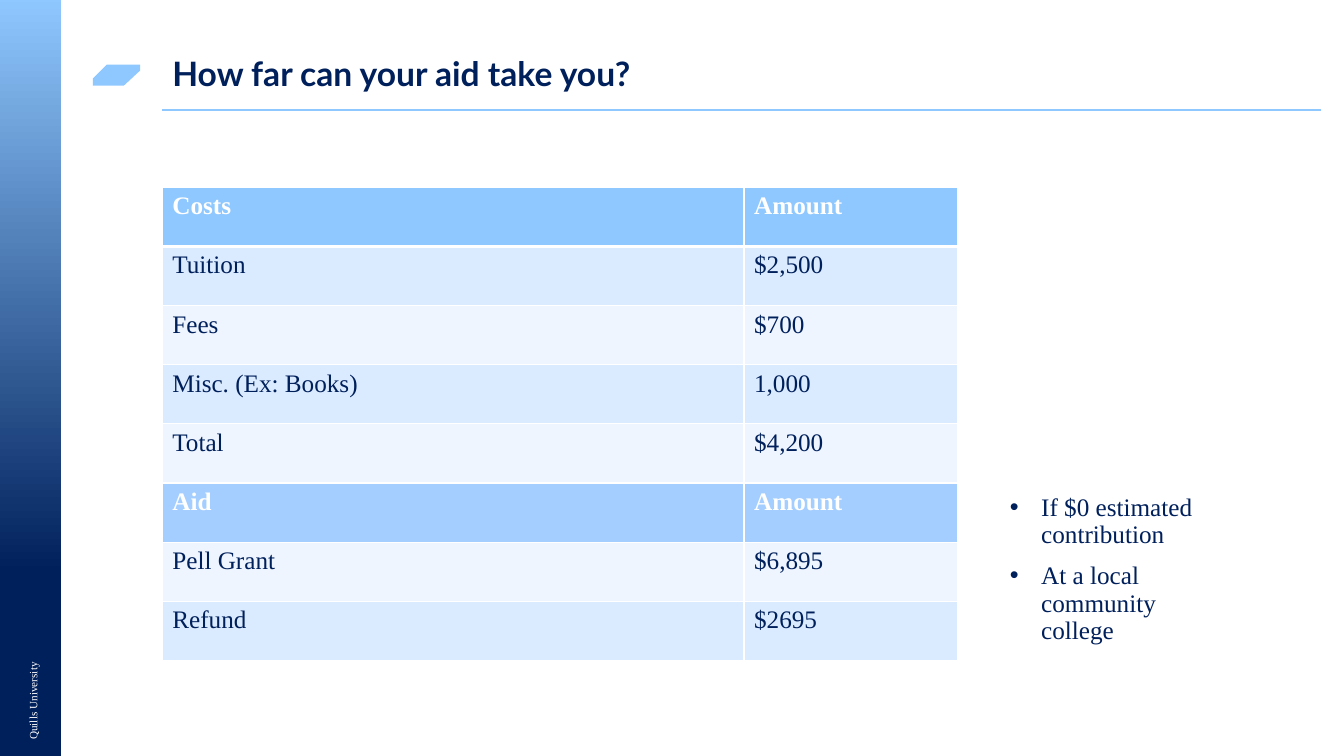
from lxml.etree import SubElement
from pptx import Presentation
from pptx.dml.color import RGBColor
from pptx.enum.shapes import MSO_CONNECTOR, MSO_SHAPE
from pptx.enum.text import MSO_ANCHOR, MSO_AUTO_SIZE, PP_ALIGN
from pptx.oxml.ns import qn
from pptx.util import Cm, Pt

NAVY, SKY, WHITE = "00205B", "8FC8FF", "FFFFFF"
MID, PALE, FAINT = "A3CEFF", "DBEBFF", "EEF5FF"
SERIF, SANS = "Times New Roman", "Lato"

ROWS = [
    ("Costs", "Amount", SKY),
    ("Tuition", "$2,500", PALE),
    ("Fees", "$700", FAINT),
    ("Misc. (Ex: Books)", "1,000", PALE),
    ("Total", "$4,200", FAINT),
    ("Aid", "Amount", MID),
    ("Pell Grant", "$6,895", FAINT),
    ("Refund", "$2695", PALE),
]
NOTES = ["If $0 estimated contribution", "At a local community college"]


def color(code):
    return RGBColor.from_string(code)


class Page:
    def __init__(self, deck):
        self.slide = deck.slides.add_slide(deck.slide_layouts[5])
        self.shapes = self.slide.shapes

    def style(self, para, size, tint=NAVY, face=SERIF, bold=False):
        font = para.font
        font.name, font.size, font.bold = face, Pt(size), bold
        font.color.rgb = color(tint)
        para.alignment = PP_ALIGN.LEFT

    def title(self, text, x, y, w, h):
        shape = self.shapes.title
        shape.left, shape.top, shape.width, shape.height = map(Cm, (x, y, w, h))
        frame = shape.text_frame
        frame.text = text
        frame.auto_size = MSO_AUTO_SIZE.NONE
        frame.vertical_anchor = MSO_ANCHOR.MIDDLE
        para = frame.paragraphs[0]
        para.line_spacing = 0.9
        self.style(para, 24, face=SANS, bold=True)

    def band(self, x, y, w, h):
        shape = self.shapes.add_shape(MSO_SHAPE.RECTANGLE, *map(Cm, (x, y, w, h)))
        shape.shadow.inherit = False
        shape.line.fill.background()
        shape.fill.gradient()
        shape.fill.gradient_angle = 270
        for stop, place, tint in zip(shape.fill.gradient_stops, (0, 0.74), (SKY, NAVY)):
            stop.position = place
            stop.color.rgb = color(tint)

    def badge(self, points):
        start, *rest = [(Cm(x), Cm(y)) for x, y in points]
        form = self.shapes.build_freeform(*start)
        form.add_line_segments(rest, close=True)
        shape = form.convert_to_shape()
        shape.shadow.inherit = False
        shape.line.fill.background()
        shape.fill.solid()
        shape.fill.fore_color.rgb = color(SKY)

    def rule(self, x, y, end):
        line = self.shapes.add_connector(
            MSO_CONNECTOR.STRAIGHT, Cm(x), Cm(y), Cm(end), Cm(y))
        line.line.color.rgb = color(SKY)
        line.line.width = Pt(1)
        SubElement(line._element.spPr, qn("a:effectLst"))

    def text(self, lines, x, y, w, h, size, tint=NAVY, turn=0, bullet=False):
        box = self.shapes.add_textbox(*map(Cm, (x, y, w, h)))
        box.rotation = turn
        frame = box.text_frame
        frame.word_wrap = True
        frame.text = "\n".join(lines)
        for para in frame.paragraphs:
            self.style(para, size, tint)
            if bullet:
                self.bullet(para)

    def bullet(self, para):
        para.line_spacing = 0.9
        para.space_before = Pt(10)
        props = para._p.get_or_add_pPr()
        props.set("marL", str(Cm(0.79)))
        props.set("indent", str(-Cm(0.79)))
        SubElement(props, qn("a:buFont"), typeface="Arial")
        SubElement(props, qn("a:buChar"), char="•")

    def edge(self, cell, side, width):
        line = SubElement(cell._tc.get_or_add_tcPr(), qn(f"a:ln{side}"), w=str(Pt(width)))
        SubElement(SubElement(line, qn("a:solidFill")), qn("a:srgbClr"), val=WHITE)

    def table(self, rows, x, y, widths, high):
        size = map(Cm, (x, y, sum(widths), high * len(rows)))
        grid = self.shapes.add_table(len(rows), len(widths), *size).table
        for col, width in zip(grid.columns, widths):
            col.width = Cm(width)
        for r, (*words, tint) in enumerate(rows):
            grid.rows[r].height = Cm(high)
            head = tint in (SKY, MID)
            for c, word in enumerate(words):
                cell = grid.cell(r, c)
                for side in "LRTB":
                    thick = (r, side) in ((0, "B"), (1, "T"))
                    self.edge(cell, side, 3 if thick else 1)
                cell.fill.solid()
                cell.fill.fore_color.rgb = color(tint)
                cell.text = word
                para = cell.text_frame.paragraphs[0]
                self.style(para, 18, WHITE if head else NAVY, bold=head)


def main():
    deck = Presentation()
    deck.slide_width, deck.slide_height = Cm(33.87), Cm(19.05)
    page = Page(deck)
    page.badge([(2.69, 1.63), (3.53, 1.63), (3.53, 1.78),
                (3.12, 2.16), (2.34, 2.16), (2.34, 1.98)])
    page.rule(4.09, 2.77, 33.3)
    page.band(-0.33, -0.13, 1.88, 19.69)
    page.text(["Quills University"], -3.48, 14.27, 8.64, 0.61, 8, WHITE, turn=270)
    page.title("How far can your aid take you?", 4.09, 1.02, 29.21, 1.75)
    page.text(NOTES, 25.2, 12.34, 5.92, 4.5, 18, bullet=True)
    page.table(ROWS, 4.09, 4.72, (14.66, 5.38), 1.49)
    deck.save("out.pptx")


if __name__ == "__main__":
    main()
